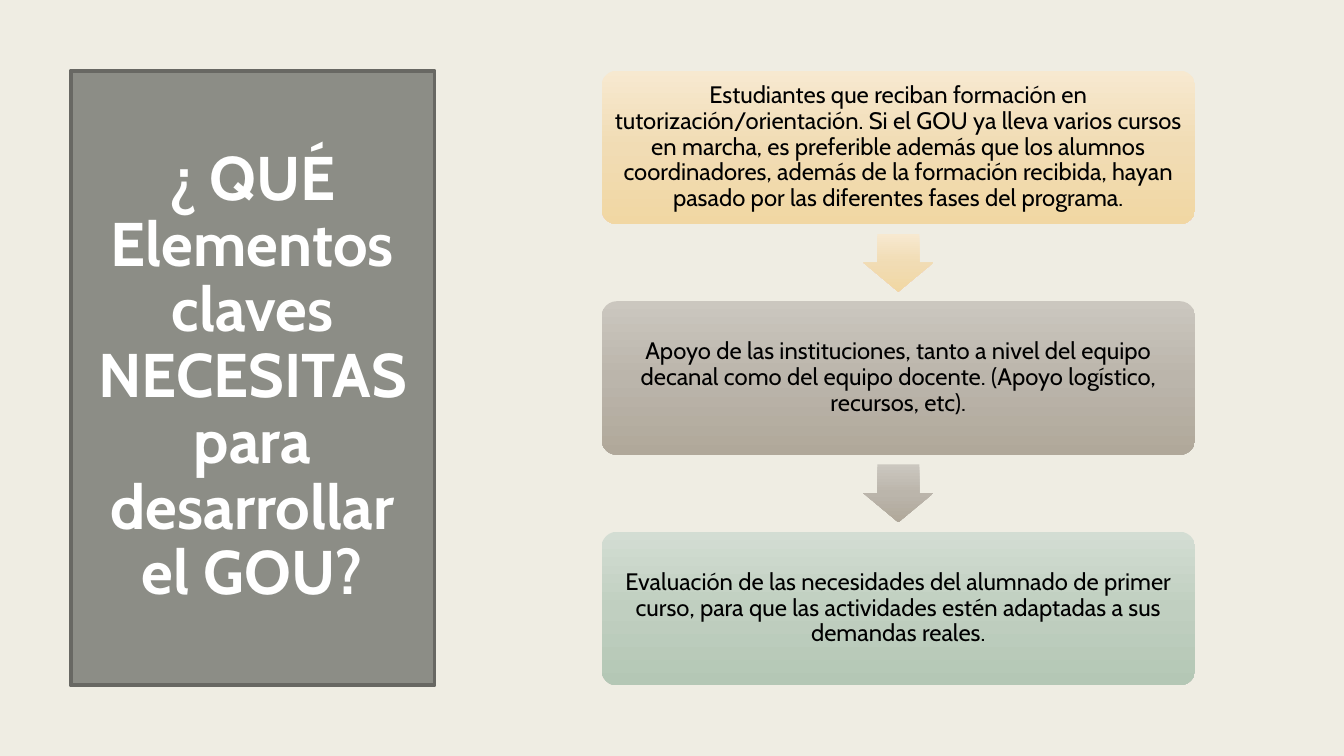
import copy

import pptx
import pptx.dml.color
import pptx.enum.shapes
import pptx.enum.text
import pptx.util

Cm = pptx.util.Cm
SHAPES = pptx.enum.shapes.MSO_SHAPE

# Content
TITLE = "¿ QUÉ Elementos claves NECESITAS para desarrollar el GOU?"
STEPS = [
    ("Estudiantes que reciban formación en tutorización/orientación. Si el GOU ya lleva "
     "varios cursos en marcha, es preferible además que los alumnos coordinadores, además "
     "de la formación recibida, hayan pasado por las diferentes fases del programa.", "sand"),
    ("Apoyo de las instituciones, tanto a nivel del equipo decanal como del equipo docente. "
     "(Apoyo logístico, recursos, etc).", "taupe"),
    ("Evaluación de las necesidades del alumnado de primer curso, para que las actividades "
     "estén adaptadas a sus demandas reales.", "sage"),
]
COLOURS = {"background": "EFEDE3", "panel": "8C8D86", "panel_line": "686863",
           "white": "FFFFFF", "black": "000000"}
GRADIENTS = {"sand": ("F7E9D0", "F1DCB4", "F1D7A3"),
             "taupe": ("CBC7BF", "BBB5AB", "B0A89A"),
             "sage": ("D3DDD3", "C0CFC0", "B4C7B5")}

# Layout in centimetres
SLIDE_WIDTH, SLIDE_HEIGHT = 33.87, 19.05
TOP, PANEL_LEFT, PANEL_WIDTH, PANEL_HEIGHT = 1.78, 1.78, 9.17, 15.49
STEP_LEFT, STEP_WIDTH, STEP_HEIGHT = 15.16, 14.96, 3.87
STEP_PITCH = (PANEL_HEIGHT - STEP_HEIGHT) / (len(STEPS) - 1)
ARROW_WIDTH, ARROW_HEIGHT = 1.76, 1.46


def rgb(value):
    return pptx.dml.color.RGBColor.from_string(value)


def add_shape(slide, kind, left, top, width, height, adjustments=()):
    shape = slide.shapes.add_shape(kind, Cm(left), Cm(top), Cm(width), Cm(height))
    shape.shadow.inherit = False
    shape.line.fill.background()
    for index, value in enumerate(adjustments):
        shape.adjustments[index] = value
    return shape


def fill_gradient(shape, colours):
    """Fill from top to bottom with three evenly spaced colours."""
    shape.fill.gradient()
    shape.fill.gradient_angle = 270
    first = shape.fill.gradient_stops[0]._gs
    first.addnext(copy.deepcopy(first))
    for index, stop in enumerate(shape.fill.gradient_stops):
        stop.position = index / 2
        stop.color.rgb = rgb(colours[index])


def write_text(shape, text, size, colour, bold=False, spacing=0.9, inset=None):
    frame = shape.text_frame
    frame.word_wrap = True
    frame.vertical_anchor = pptx.enum.text.MSO_ANCHOR.MIDDLE
    if inset is not None:
        frame.margin_left = frame.margin_right = Cm(inset)
        frame.margin_top = frame.margin_bottom = Cm(inset)
    paragraph = frame.paragraphs[0]
    paragraph.alignment = pptx.enum.text.PP_ALIGN.CENTER
    paragraph.line_spacing = spacing
    run = paragraph.add_run()
    run.text = text
    run.font.name = "Cabin"
    run.font.size = pptx.util.Pt(size)
    run.font.bold = bold
    run.font.color.rgb = rgb(colour)


def main():
    presentation = pptx.Presentation()
    presentation.slide_width = Cm(SLIDE_WIDTH)
    presentation.slide_height = Cm(SLIDE_HEIGHT)
    slide = presentation.slides.add_slide(presentation.slide_layouts[6])
    slide.background.fill.solid()
    slide.background.fill.fore_color.rgb = rgb(COLOURS["background"])

    # Title panel
    panel = add_shape(slide, SHAPES.RECTANGLE, PANEL_LEFT, TOP, PANEL_WIDTH, PANEL_HEIGHT)
    panel.fill.solid()
    panel.fill.fore_color.rgb = rgb(COLOURS["panel"])
    panel.line.color.rgb = rgb(COLOURS["panel_line"])
    panel.line.width = pptx.util.Pt(2.75)
    write_text(panel, TITLE, size=44, colour=COLOURS["white"], bold=True, spacing=0.89)

    # Steps, each followed by an arrow centred in the gap to the next
    arrow_left = STEP_LEFT + (STEP_WIDTH - ARROW_WIDTH) / 2
    arrow_offset = (STEP_HEIGHT + STEP_PITCH - ARROW_HEIGHT) / 2
    for index, (text, gradient) in enumerate(STEPS):
        top = TOP + index * STEP_PITCH
        step = add_shape(slide, SHAPES.ROUNDED_RECTANGLE, STEP_LEFT, top,
                         STEP_WIDTH, STEP_HEIGHT, [0.1])
        fill_gradient(step, GRADIENTS[gradient])
        write_text(step, text, size=17, colour=COLOURS["black"], inset=0.18)
        if index < len(STEPS) - 1:
            arrow = add_shape(slide, SHAPES.DOWN_ARROW, arrow_left, top + arrow_offset,
                              ARROW_WIDTH, ARROW_HEIGHT, [0.6, 0.5])
            fill_gradient(arrow, GRADIENTS[gradient])

    presentation.save("out.pptx")


if __name__ == "__main__":
    main()
